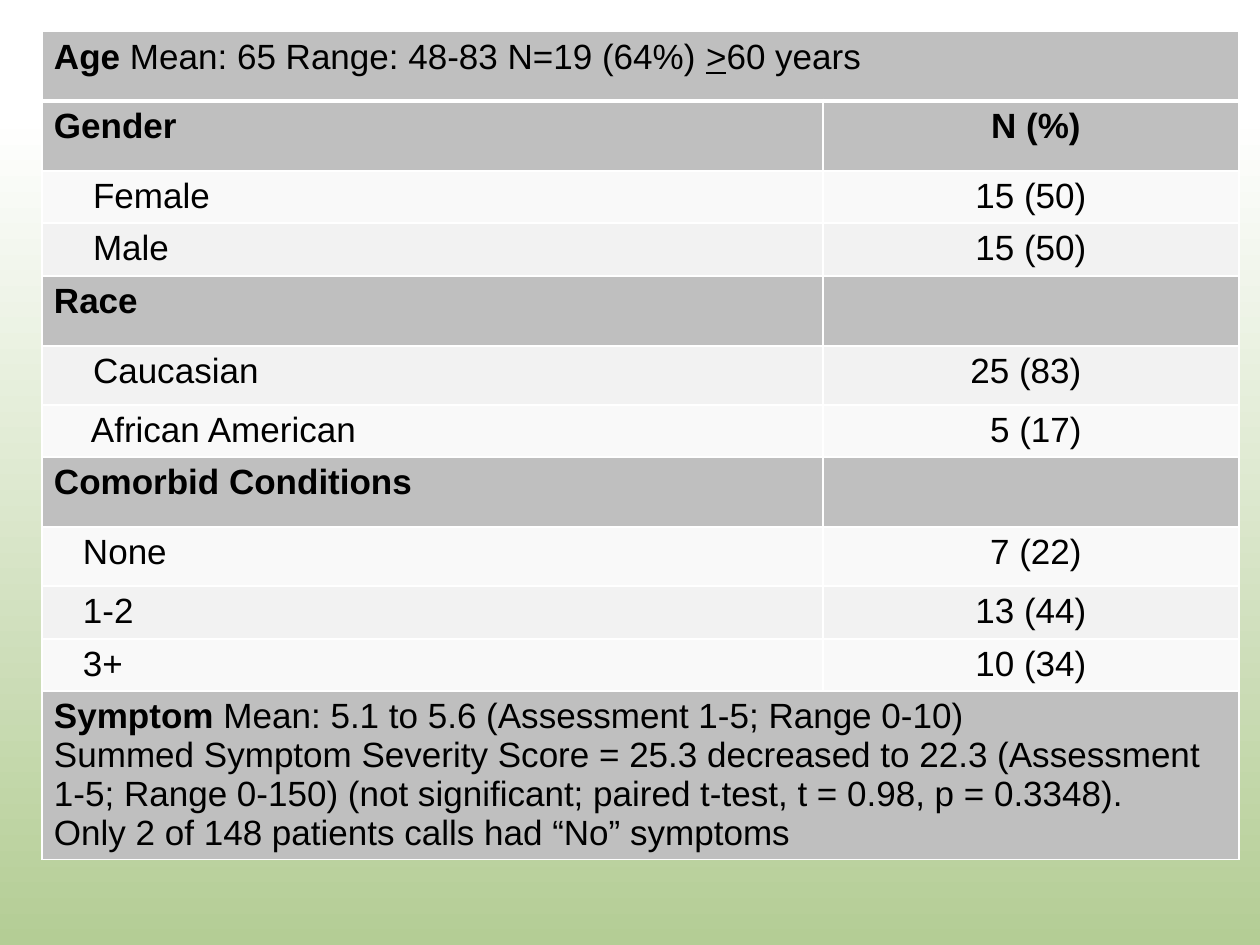
from lxml.etree import SubElement
from pptx import Presentation
from pptx.dml.color import RGBColor
from pptx.enum.text import PP_ALIGN
from pptx.oxml.ns import qn
from pptx.util import Emu, Pt

PX = 914400 // 126
HEAD, LIGHT, PALE = "BFBFBF", "F9F9F9", "F2F2F2"
PAD = 12
AGE = [[("Age ", "b"), ("Mean: 65 Range: 48-83 N=19 (64%) ", ""), (">", "u"), ("60 years", "")]]
SYMPTOM = [
    [("Symptom ", "b"), ("Mean: 5.1 to 5.6 (Assessment 1-5; Range 0-10)", "")],
    [("Summed Symptom Severity Score = 25.3 decreased to 22.3 (Assessment 1-5; "
      "Range 0-150) (not significant; paired t-test, t = 0.98, p = 0.3348).", "")],
    [("Only 2 of 148 patients calls had “No” symptoms", "")],
]
# height, fill, label, label indent, value, value shift
ROWS = [
    (70, HEAD, "Gender", 0, "N (%)", 5),
    (52, LIGHT, "Female", 39, "15 (50)", 0),
    (53, PALE, "Male", 39, "15 (50)", 0),
    (70, HEAD, "Race", 0, "", 0),
    (59, PALE, "Caucasian", 39, "25 (83)", -5),
    (52, LIGHT, "African American", 37, "5 (17)", 5),
    (70, HEAD, "Comorbid Conditions", 0, "", 0),
    (59, LIGHT, "None", 29, "7 (22)", 5),
    (53, PALE, "1-2", 29, "13 (44)", 0),
    (52, LIGHT, "3+", 29, "10 (34)", 0),
]


def px(n):
    """Turn pixels into EMU."""
    return Emu(n * PX)


def color(hex_text):
    """Turn a hex string into a colour."""
    return RGBColor.from_string(hex_text)


def paint_background(s):
    """Fade the slide from white down to green."""
    fill = s.background.fill
    fill.gradient()
    fill.gradient_angle = 270
    for stop, place, shade in zip(fill.gradient_stops, (0.12, 1), ("FFFFFF", "B4CD95")):
        stop.position = place
        stop.color.rgb = color(shade)


def add_borders(cell, top=1, bottom=1):
    """Draw white borders with widths in points."""
    tcPr = cell._tc.get_or_add_tcPr()
    for side, width in (("L", 1), ("R", 1), ("T", top), ("B", bottom)):
        ln = SubElement(tcPr, qn(f"a:ln{side}"), w=str(Pt(width)))
        SubElement(SubElement(ln, qn("a:solidFill")), qn("a:srgbClr"), val="FFFFFF")


def style_cell(cell, fill, **borders):
    """Set the borders and fill of a cell."""
    add_borders(cell, **borders)
    cell.fill.solid()
    cell.fill.fore_color.rgb = color(fill)


def write_cell(cell, paragraphs, align=PP_ALIGN.LEFT, left=0, right=0):
    """Write paragraphs of (text, style) runs with extra side margins."""
    cell.margin_left, cell.margin_right = px(PAD + left), px(PAD + right)
    tf = cell.text_frame
    for i, runs in enumerate(paragraphs):
        p = tf.add_paragraph() if i else tf.paragraphs[0]
        p.alignment = align
        p.font.name, p.font.size = "Arial", Pt(20)
        p.font.color.rgb = color("000000")
        for text, style in runs:
            r = p.add_run()
            r.text = text
            r.font.bold = style == "b"
            r.font.underline = style == "u"


def add_wide_row(table, row, paragraphs, **borders):
    """Fill one row that spans both columns."""
    first, last = table.cell(row, 0), table.cell(row, 1)
    for cell in (first, last):
        style_cell(cell, HEAD, **borders)
    first.merge(last)
    write_cell(first, paragraphs)


def add_pair_row(table, row, fill, label, indent, value, shift):
    """Fill one row with a label and a centred value."""
    style = "b" if fill == HEAD else ""
    for cell in (table.cell(row, 0), table.cell(row, 1)):
        style_cell(cell, fill, top=3 if row == 1 else 1)
    write_cell(table.cell(row, 0), [[(label, style)]], left=indent)
    if value:
        write_cell(table.cell(row, 1), [[(value, style)]], PP_ALIGN.CENTER,
                   max(2 * shift, 0), max(-2 * shift, 0))


def add_patient_table(s):
    """Add the table of patient characteristics."""
    heights = [70, *(row[0] for row in ROWS), 168]
    widths = [781, 416]
    table = s.shapes.add_table(len(heights), 2, px(42), px(31),
                               px(sum(widths)), px(sum(heights))).table
    table.first_row = table.horz_banding = False
    for column, width in zip(table.columns, widths):
        column.width = px(width)
    for row, height in zip(table.rows, heights):
        row.height = px(height)
    add_wide_row(table, 0, AGE, bottom=3)
    for i, (_, *content) in enumerate(ROWS, 1):
        add_pair_row(table, i, *content)
    add_wide_row(table, len(heights) - 1, SYMPTOM)


def main():
    """Build and save the slide."""
    prs = Presentation()
    prs.slide_width, prs.slide_height = px(1260), px(945)
    s = prs.slides.add_slide(prs.slide_layouts[6])
    paint_background(s)
    add_patient_table(s)
    prs.save("out.pptx")


if __name__ == "__main__":
    main()
